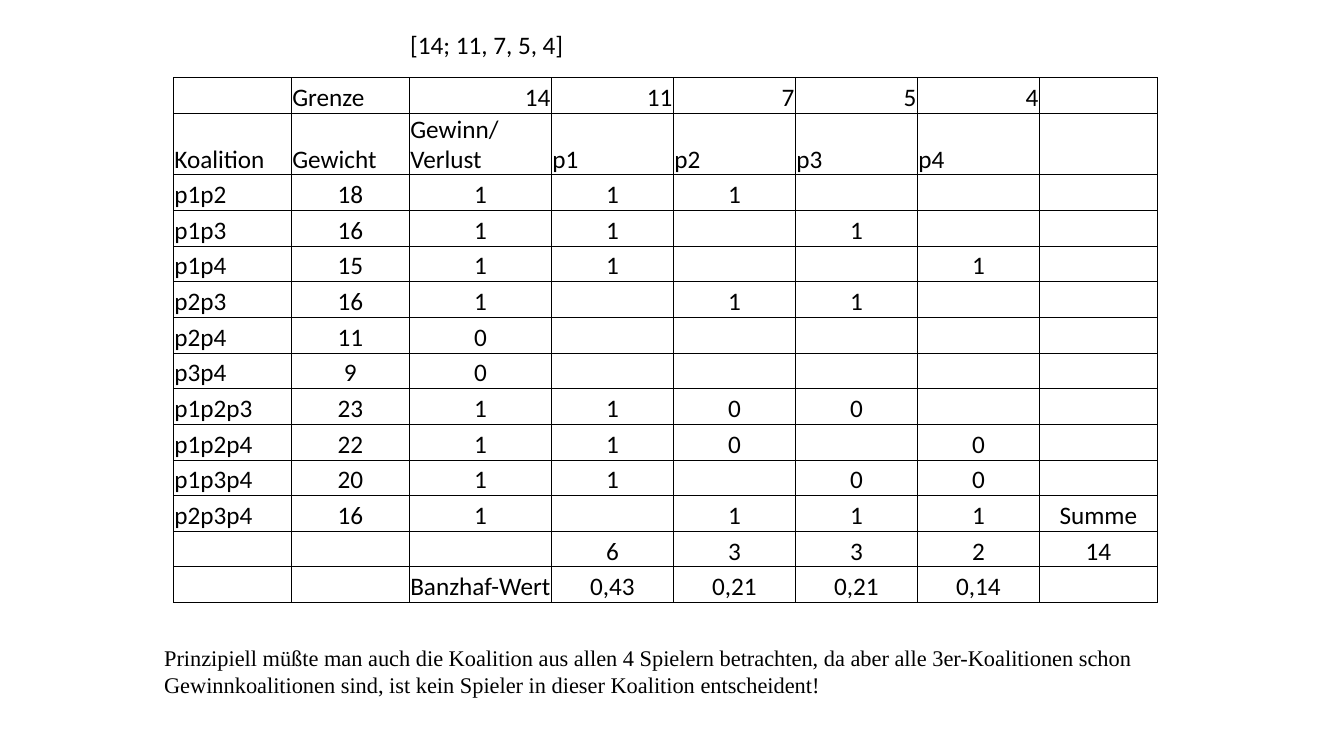
from lxml import etree
from pptx import Presentation
from pptx.dml.color import RGBColor
from pptx.enum.text import MSO_ANCHOR, PP_ALIGN
from pptx.oxml.ns import qn
from pptx.util import Inches, Pt

LEFT, CENTER, RIGHT = PP_ALIGN.LEFT, PP_ALIGN.CENTER, PP_ALIGN.RIGHT
BOTTOM = MSO_ANCHOR.BOTTOM

COLUMN_WIDTHS = [1.17, 1.17, 1.41, 1.21, 1.21, 1.21, 1.21, 1.17]
BANZHAF_ROWS = [
    ["", "Grenze", "14", "11", "7", "5", "4", ""],
    ["Koalition", "Gewicht", "Gewinn/Verlust", "p1", "p2", "p3", "p4", ""],
    ["p1p2", "18", "1", "1", "1", "", "", ""],
    ["p1p3", "16", "1", "1", "", "1", "", ""],
    ["p1p4", "15", "1", "1", "", "", "1", ""],
    ["p2p3", "16", "1", "", "1", "1", "", ""],
    ["p2p4", "11", "0", "", "", "", "", ""],
    ["p3p4", "9", "0", "", "", "", "", ""],
    ["p1p2p3", "23", "1", "1", "0", "0", "", ""],
    ["p1p2p4", "22", "1", "1", "0", "", "0", ""],
    ["p1p3p4", "20", "1", "1", "", "0", "0", ""],
    ["p2p3p4", "16", "1", "", "1", "1", "1", "Summe"],
    ["", "", "", "6", "3", "3", "2", "14"],
    ["", "", "Banzhaf-Wert", "0,43", "0,21", "0,21", "0,14", ""],
]
NOTE = ("Prinzipiell müßte man auch die Koalition aus allen 4 Spielern betrachten, "
        "da aber alle 3er-Koalitionen schon Gewinnkoalitionen sind, "
        "ist kein Spieler in dieser Koalition entscheident!")


def color(hex_string):
    return RGBColor.from_string(hex_string)


def alignment(row, column):
    """Weights sit right, headings and coalition names left, counts centred."""
    if row == 0 and column > 1:
        return RIGHT
    return LEFT if row < 2 or column == 0 else CENTER


class SlideBuilder:
    ink = "000000"
    body_font = "Calibri"
    note_font = "Times New Roman"
    border_width = Pt(0.5)

    def __init__(self, slide):
        self.slide = slide

    def style(self, paragraph, size, font, align=LEFT):
        paragraph.alignment = align
        paragraph.font.size = Pt(size)
        paragraph.font.name = font
        paragraph.font.color.rgb = color(self.ink)

    def text(self, words, left, top, width, height, size, font):
        box = self.slide.shapes.add_textbox(
            Inches(left), Inches(top), Inches(width), Inches(height))
        frame = box.text_frame
        frame.word_wrap = True
        frame.text = words
        self.style(frame.paragraphs[0], size, font)

    def borders(self, cell):
        properties = cell._tc.get_or_add_tcPr()
        for side in ("a:lnL", "a:lnR", "a:lnT", "a:lnB"):
            line = etree.SubElement(properties, qn(side), w=str(self.border_width))
            fill = etree.SubElement(line, qn("a:solidFill"))
            etree.SubElement(fill, qn("a:srgbClr"), val=self.ink)

    def table(self, rows, widths, left, top, height):
        table = self.slide.shapes.add_table(
            len(rows), len(widths), Inches(left), Inches(top),
            Inches(sum(widths)), Inches(height)).table
        table.first_row = table.horz_banding = False
        for column, width in zip(table.columns, widths):
            column.width = Inches(width)
        for r, row in enumerate(rows):
            for c, words in enumerate(row):
                cell = table.cell(r, c)
                cell.text = words
                cell.vertical_anchor = BOTTOM
                cell.margin_left = cell.margin_right = cell.margin_top = Inches(0.01)
                cell.margin_bottom = 0
                self.borders(cell)
                cell.fill.background()
                self.style(cell.text_frame.paragraphs[0], 18, self.body_font,
                           alignment(r, c))


def main():
    deck = Presentation()
    deck.slide_width, deck.slide_height = Inches(13.33), Inches(7.5)
    builder = SlideBuilder(deck.slides.add_slide(deck.slide_layouts[6]))

    # Voting game
    builder.text("[14; 11, 7, 5, 4]", 3.97, 0.24, 6.67, 0.4, 18, builder.body_font)

    # Coalitions and Banzhaf values
    builder.table(BANZHAF_ROWS, COLUMN_WIDTHS, 1.72, 0.77, 4.95)

    # Remark on the grand coalition
    builder.text(NOTE, 1.53, 6.34, 10.4, 0.78, 16, builder.note_font)

    deck.save("out.pptx")


if __name__ == "__main__":
    main()
